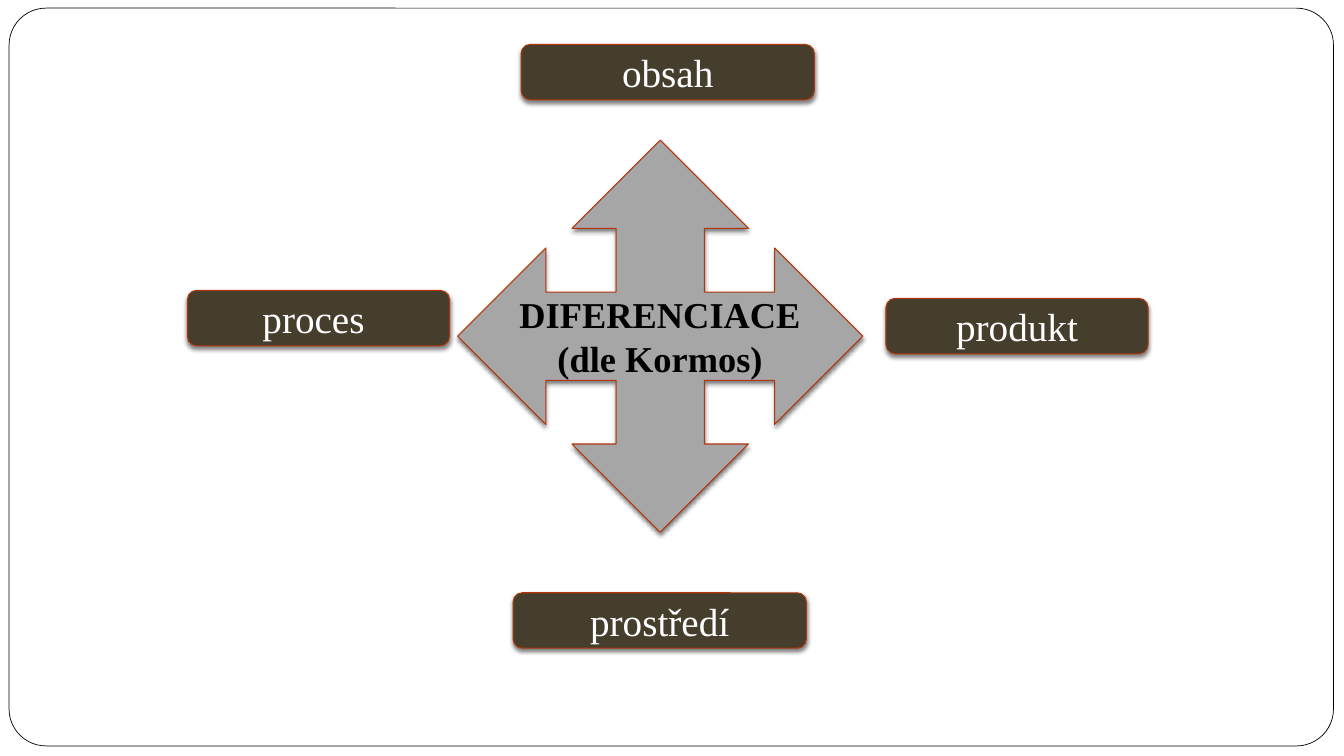
"""Build a slide with four labels around a four-way arrow."""
from dataclasses import dataclass

from lxml.etree import SubElement
from pptx import Presentation
from pptx.dml.color import RGBColor
from pptx.enum.shapes import MSO_SHAPE as Preset
from pptx.enum.text import MSO_ANCHOR as Anchor, PP_ALIGN as Align
from pptx.oxml.ns import qn
from pptx.util import Pt

SLIDE_SIZE = (960, 540)
FRAME = (6.5, 5.8, 946, 527)
ARROW = ("DIFERENCIACE (dle Kormos)", (326.9, 100.1, 289.4, 280.1))
LABEL_HEIGHT = 39.6
LABELS = [
    ("obsah", 372.2, 31.7, 209.5),
    ("prostředí", 366.5, 423.4, 209.5),
    ("proces ", 133.9, 207.4, 187.2),
    ("produkt", 632.9, 213.1, 187.2),
]


@dataclass(frozen=True)
class Theme:
    """Colours, type sizes and line widths."""
    font: str = "Times New Roman"
    white: str = "FFFFFF"
    black: str = "000000"
    arrow: str = "A6A6A6"
    label: str = "463E2C"
    outline: str = "B1360B"
    arrow_size: float = 26
    label_size: float = 28
    frame_width: float = 0.5
    outline_width: float = 0.75


THEME = Theme()


def add_box(slide, preset, box, fill, line, width):
    """Add a filled and outlined preset shape without a shadow."""
    shape = slide.shapes.add_shape(preset, *map(Pt, box))
    shape.shadow.inherit = False
    shape.fill.solid()
    shape.fill.fore_color.rgb = RGBColor.from_string(fill)
    shape.line.color.rgb = RGBColor.from_string(line)
    shape.line.width = Pt(width)
    return shape


def add_shadow(shape):
    """Give the shape a soft shadow straight below it."""
    effects = shape._element.spPr.find(qn("a:effectLst"))
    shadow = SubElement(effects, qn("a:outerShdw"), blurRad=str(Pt(3)),
                        dist=str(Pt(2)), dir="5400000", rotWithShape="0")
    color = SubElement(shadow, qn("a:srgbClr"), val=THEME.black)
    SubElement(color, qn("a:alpha"), val="50000")


def write_text(shape, text, *, size, color, bold=False, before=0):
    """Write centred text in the shape."""
    frame = shape.text_frame
    frame.word_wrap = True
    frame.vertical_anchor = Anchor.MIDDLE
    paragraph = frame.paragraphs[0]
    paragraph.alignment = Align.CENTER
    paragraph.space_before = Pt(before)
    run = paragraph.add_run()
    run.text = text
    run.font.name = THEME.font
    run.font.size = Pt(size)
    run.font.bold = bold
    run.font.color.rgb = RGBColor.from_string(color)


def main():
    """Build and save the slide."""
    presentation = Presentation()
    presentation.slide_width, presentation.slide_height = map(Pt, SLIDE_SIZE)
    slide = presentation.slides.add_slide(presentation.slide_layouts[6])

    frame = add_box(slide, Preset.ROUNDED_RECTANGLE, FRAME, THEME.white,
                    THEME.black, THEME.frame_width)
    frame.adjustments[0] = 0.05

    text, box = ARROW
    arrow = add_box(slide, Preset.QUAD_ARROW, box, THEME.arrow,
                    THEME.outline, THEME.outline_width)
    add_shadow(arrow)
    write_text(arrow, text, size=THEME.arrow_size, color=THEME.black,
               bold=True, before=5.8)

    for text, left, top, width in LABELS:
        label = add_box(slide, Preset.ROUNDED_RECTANGLE,
                        (left, top, width, LABEL_HEIGHT), THEME.label,
                        THEME.outline, THEME.outline_width)
        add_shadow(label)
        write_text(label, text, size=THEME.label_size, color=THEME.white)

    presentation.save("out.pptx")


if __name__ == "__main__":
    main()
